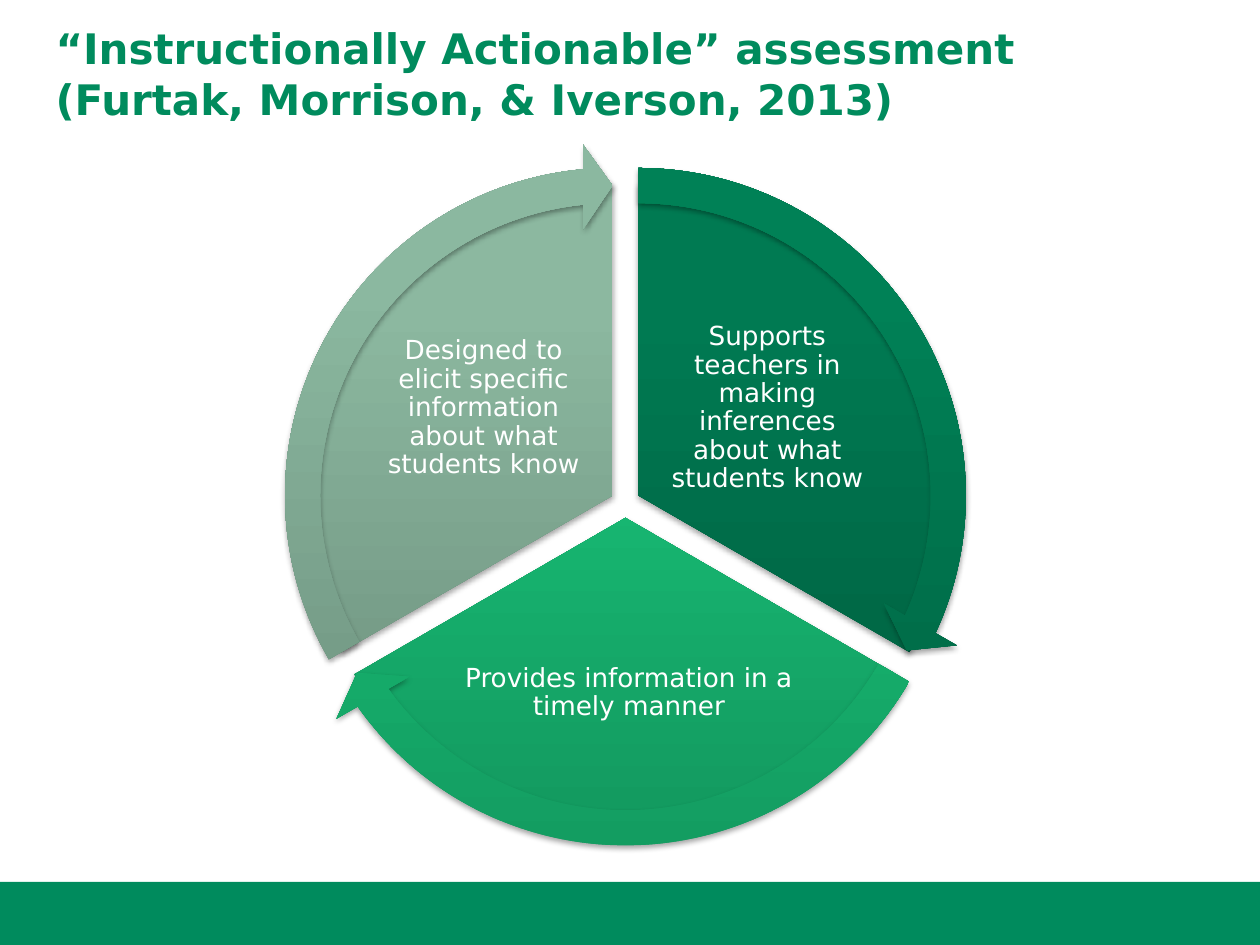
from copy import deepcopy
from math import cos, radians, sin

from pptx import Presentation
from pptx.dml.color import RGBColor
from pptx.enum.shapes import MSO_SHAPE
from pptx.enum.text import MSO_ANCHOR, PP_ALIGN
from pptx.oxml import parse_xml
from pptx.util import Cm, Pt

RECT, PIE, ARROW = MSO_SHAPE.RECTANGLE, MSO_SHAPE.PIE, MSO_SHAPE.CIRCULAR_ARROW
TOP, MIDDLE = MSO_ANCHOR.TOP, MSO_ANCHOR.MIDDLE
LEFT, CENTER = PP_ALIGN.LEFT, PP_ALIGN.CENTER

COLORS = {"green": "008B5D", "white": "FFFFFF"}
TITLE = ["“Instructionally Actionable” assessment", "(Furtak, Morrison, & Iverson, 2013)"]
# Clockwise from the top; gradients run from bottom to top
SECTORS = [
    {"text": "Supports teachers in making inferences about what students know",
     "box": (13.21, 6.35, 4.52, 3.76),
     "pie": ("005E3F", "007A52", "007B52"), "arrow": ("006342", "008156", "008156")},
    {"text": "Provides information in a timely manner",
     "box": (9.3, 12.32, 6.76, 3.3),
     "pie": ("13995F", "19C67B", "15CB7C"), "arrow": ("139B60", "19C97C", "16CD7D")},
    {"text": "Designed to elicit specific information about what students know",
     "box": (7.49, 6.35, 4.52, 3.76),
     "pie": ("6B8E7B", "8CB8A0", "8BBAA1"), "arrow": ("6B8E7B", "8BB8A0", "8BBAA0")},
]
STOPS = (0, 0.8, 1)
HUB = (12.61, 10.14)
GAP = 0.3            # distance of each sector from the hub
PIE_SIZE, ARROW_SIZE = 12.62, 14.2
SWEEP = 120
HEAD = 5.46          # degrees taken by an arrowhead
DEGREE = 0.6         # one degree in adjustment units
TITLE_FONT = {"name": "DejaVu Sans", "size": Pt(24), "bold": True}
LABEL_FONT = {"name": "DejaVu Sans", "size": Pt(15)}
SHADOW = parse_xml(
    '<a:outerShdw xmlns:a="http://schemas.openxmlformats.org/drawingml/2006/main" '
    'blurRad="40000" dist="23000" dir="5400000" rotWithShape="0">'
    '<a:srgbClr val="000000"><a:alpha val="35000"/></a:srgbClr></a:outerShdw>')


def add_text(s, box, lines, font, color, insets, anchor, align, spacing):
    tf = s.shapes.add_textbox(*map(Cm, box)).text_frame
    format_values = {"word_wrap": True, "vertical_anchor": anchor}
    format_values.update(zip(("margin_left", "margin_top", "margin_right", "margin_bottom"),
                             map(Cm, insets)))
    for name, value in format_values.items():
        setattr(tf, name, value)
    p = tf.paragraphs[0]
    p.alignment, p.line_spacing = align, spacing
    for i, line in enumerate(lines):
        if i:
            p.add_line_break()
        r = p.add_run()
        r.text = line
        for name, value in font.items():
            setattr(r.font, name, value)
        r.font.color.rgb = RGBColor.from_string(COLORS[color])


def add_plain(s, kind, box):
    sp = s.shapes.add_shape(kind, *map(Cm, box))
    sp.shadow.inherit = False
    sp.line.fill.background()
    return sp


def add_round(s, kind, center, size, adjustments, gradient):
    """Add a pie or circular arrow with a vertical gradient and a soft shadow."""
    x, y = center
    sp = add_plain(s, kind, (x - size / 2, y - size / 2, size, size))
    for i, value in enumerate(adjustments):
        sp.adjustments[i] = value
    sp.fill.gradient()
    sp.fill.gradient_angle = 90
    gs = sp.element.spPr.xpath("a:gradFill/a:gsLst/a:gs")[0]
    gs.addnext(deepcopy(gs))
    for stop, position, color in zip(sp.fill.gradient_stops, STOPS, gradient):
        stop.position = position
        stop.color.rgb = RGBColor.from_string(color)
    sp.element.spPr.xpath("a:effectLst")[0].append(deepcopy(SHADOW))


prs = Presentation()
prs.slide_width, prs.slide_height = Cm(25.4), Cm(19.05)
s = prs.slides.add_slide(prs.slide_layouts[6])

band = add_plain(s, RECT, (0, 17.78, 25.4, 1.27))
band.fill.solid()
band.fill.fore_color.rgb = RGBColor.from_string(COLORS["green"])
add_text(s, (1.12, 0.46, 23.75, 2.49), TITLE, TITLE_FONT, "green",
         (0, 0, 0.25, 0.13), TOP, LEFT, 1.0)

arrows = []
for i, sector in enumerate(SECTORS):
    start = (270 + i * SWEEP) % 360
    end = (start + SWEEP) % 360
    middle = radians(start + SWEEP / 2)
    center = (HUB[0] + GAP * cos(middle), HUB[1] + GAP * sin(middle))
    add_round(s, PIE, center, PIE_SIZE, (start * DEGREE, end * DEGREE), sector["pie"])
    add_text(s, sector["box"], [sector["text"]], LABEL_FONT, "white",
             (0.05,) * 4, MIDDLE, CENTER, 0.9)
    bend = (0.05, HEAD * DEGREE, (end - HEAD) * DEGREE, start * DEGREE, 0.06)
    arrows.append((center, ARROW_SIZE, bend, sector["arrow"]))
for arrow in arrows:
    add_round(s, ARROW, *arrow)

prs.save("out.pptx")
